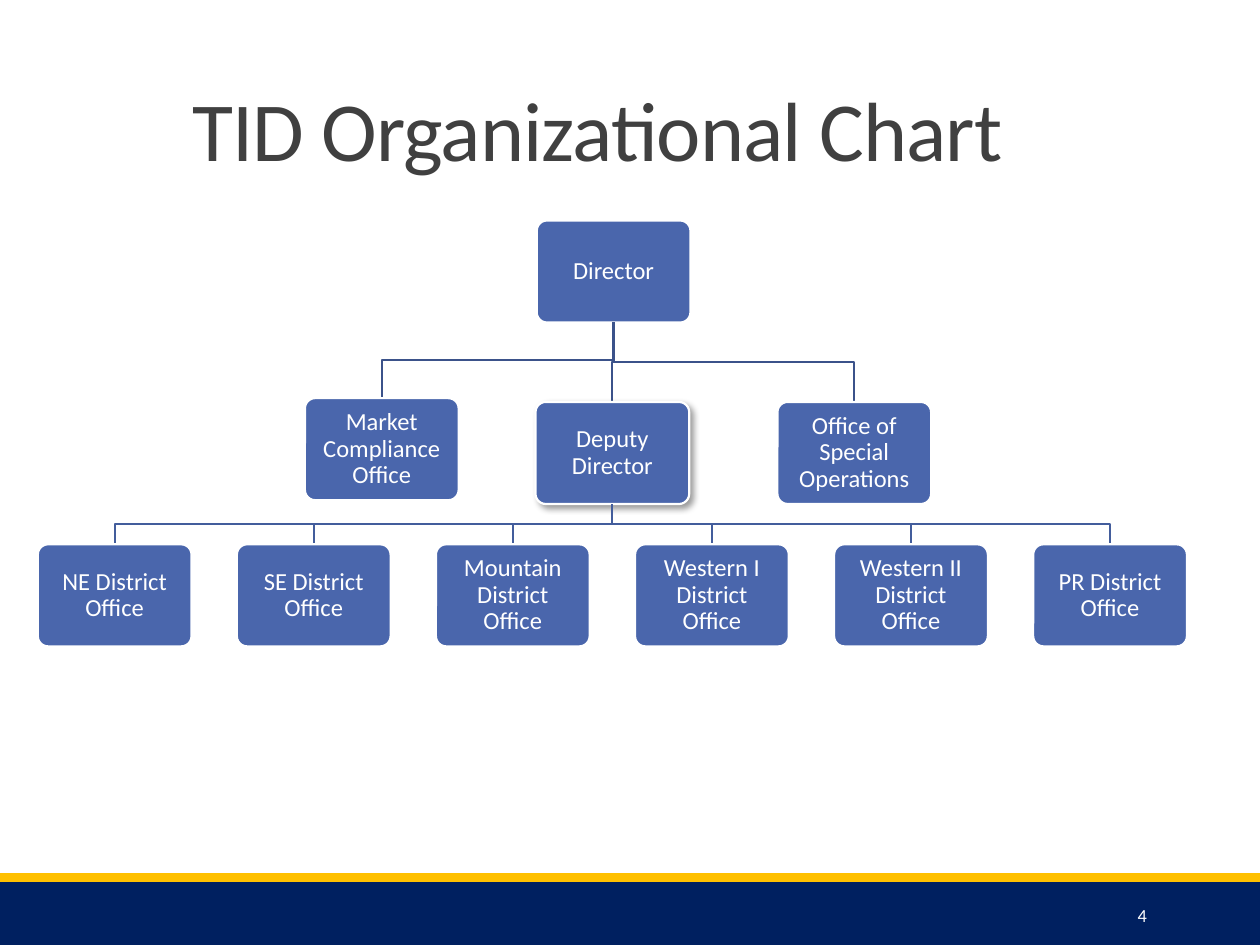
from dataclasses import dataclass

from lxml.etree import SubElement
from pptx import Presentation
from pptx.dml.color import RGBColor
from pptx.enum.shapes import MSO_SHAPE
from pptx.enum.text import MSO_ANCHOR, PP_ALIGN
from pptx.oxml.ns import qn
from pptx.util import Inches, Pt


@dataclass(frozen=True)
class Theme:
    font: str = "Calibri"
    title_size: float = 48
    box_size: float = 14
    number_size: float = 10.5
    line_width: float = 1.25
    navy: str = "002060"
    gold: str = "FFC000"
    box_fill: str = "4A66AC"
    upper_branch: str = "3B528A"
    lower_branch: str = "435D9C"
    title: str = "404040"
    white: str = "FFFFFF"
    shadow: str = "000000"


THEME = Theme()
BOX_WIDTH, BOX_HEIGHT = 1.22, 0.81


def write_text(frame, text, *, size, color, align=PP_ALIGN.LEFT,
               anchor=MSO_ANCHOR.MIDDLE, line_spacing=1.0, tracking=None,
               inset=None):
    frame.word_wrap = True
    frame.vertical_anchor = anchor
    if inset is not None:
        frame.margin_left = frame.margin_right = Inches(inset)
        frame.margin_top = frame.margin_bottom = Inches(inset)
    para = frame.paragraphs[0]
    para.alignment = align
    para.line_spacing = line_spacing
    span = para.add_run()
    span.text = text
    span.font.name = THEME.font
    span.font.size = Pt(size)
    span.font.color.rgb = RGBColor.from_string(color)
    if tracking is not None:
        span._r.get_or_add_rPr().set("spc", str(int(tracking * 100)))


class ChartSlide:
    def __init__(self, deck, theme):
        self.theme = theme
        self.page = deck.slides.add_slide(deck.slide_layouts[6])

    def band(self, top, height, color):
        shape = self.page.shapes.add_shape(
            MSO_SHAPE.RECTANGLE, 0, Inches(top), Inches(10), Inches(height))
        shape.shadow.inherit = False
        shape.fill.solid()
        shape.fill.fore_color.rgb = RGBColor.from_string(color)
        shape.line.fill.background()

    def label(self, text, left, top, width, height, **style):
        box = self.page.shapes.add_textbox(
            Inches(left), Inches(top), Inches(width), Inches(height))
        write_text(box.text_frame, text, **style)

    def office(self, text, left, top, raised=False):
        box = self.page.shapes.add_shape(
            MSO_SHAPE.ROUNDED_RECTANGLE, Inches(left), Inches(top),
            Inches(BOX_WIDTH), Inches(BOX_HEIGHT))
        box.adjustments[0] = 0.1
        box.shadow.inherit = False
        box.fill.solid()
        box.fill.fore_color.rgb = RGBColor.from_string(self.theme.box_fill)
        box.line.color.rgb = RGBColor.from_string(self.theme.white)
        box.line.width = Pt(self.theme.line_width)
        if raised:
            self.drop_shadow(box)
        write_text(box.text_frame, text, size=self.theme.box_size,
                   color=self.theme.white, align=PP_ALIGN.CENTER,
                   line_spacing=0.9, inset=0.08)
        return box

    def drop_shadow(self, box):
        effects = box._element.spPr.find(qn("a:effectLst"))
        shadow = SubElement(effects, qn("a:outerShdw"), blurRad=str(Pt(4)),
                            dist=str(Pt(3)), dir=str(45 * 60000),
                            algn="tl", rotWithShape="0")
        color = SubElement(shadow, qn("a:srgbClr"), val=self.theme.shadow)
        SubElement(color, qn("a:alpha"), val="40000")

    def branch(self, parent, left, top, color):
        """Elbow from the parent's bottom to the top of a box at left, top."""
        start_x = parent.left + parent.width // 2
        start_y = parent.top + parent.height
        end_x, end_y = Inches(left + BOX_WIDTH / 2), Inches(top)
        middle = (start_y + end_y) // 2
        builder = self.page.shapes.build_freeform(start_x, start_y)
        builder.add_line_segments(
            [(start_x, middle), (end_x, middle), (end_x, end_y)], close=False)
        line = builder.convert_to_shape()
        line.shadow.inherit = False
        line.fill.background()
        line.line.color.rgb = RGBColor.from_string(color)
        line.line.width = Pt(self.theme.line_width)

    def report(self, parent, text, left, top, color, raised=False):
        self.branch(parent, left, top, color)
        return self.office(text, left, top, raised)


def main():
    deck = Presentation()
    deck.slide_width, deck.slide_height = Inches(10), Inches(7.5)
    slide = ChartSlide(deck, THEME)

    # Footer bands, title and page number
    slide.band(7, 0.5, THEME.navy)
    slide.band(6.93, 0.07, THEME.gold)
    slide.label("TID Organizational Chart", 1.43, 0.31, 7.72, 1.16,
                size=THEME.title_size, color=THEME.title,
                anchor=MSO_ANCHOR.BOTTOM, line_spacing=0.85, tracking=-0.5)
    slide.label("4", 8.12, 7.06, 1.08, 0.4, size=THEME.number_size,
                color=THEME.white, align=PP_ALIGN.RIGHT)

    # Director and direct reports
    director = slide.office("Director", 4.26, 1.75)
    deputy = slide.report(director, "Deputy Director", 4.25, 3.19,
                          THEME.upper_branch, raised=True)
    for text, left, top in (("Office of Special Operations", 6.17, 3.19),
                            ("Market Compliance Office", 2.42, 3.16)):
        slide.report(director, text, left, top, THEME.upper_branch)

    # District offices, evenly spaced under the deputy
    districts = ("NE", "SE", "Mountain", "Western I", "Western II", "PR")
    for index, district in enumerate(districts):
        slide.report(deputy, f"{district} District Office",
                     0.3 + 1.58 * index, 4.32, THEME.lower_branch)

    deck.save("out.pptx")


if __name__ == "__main__":
    main()
